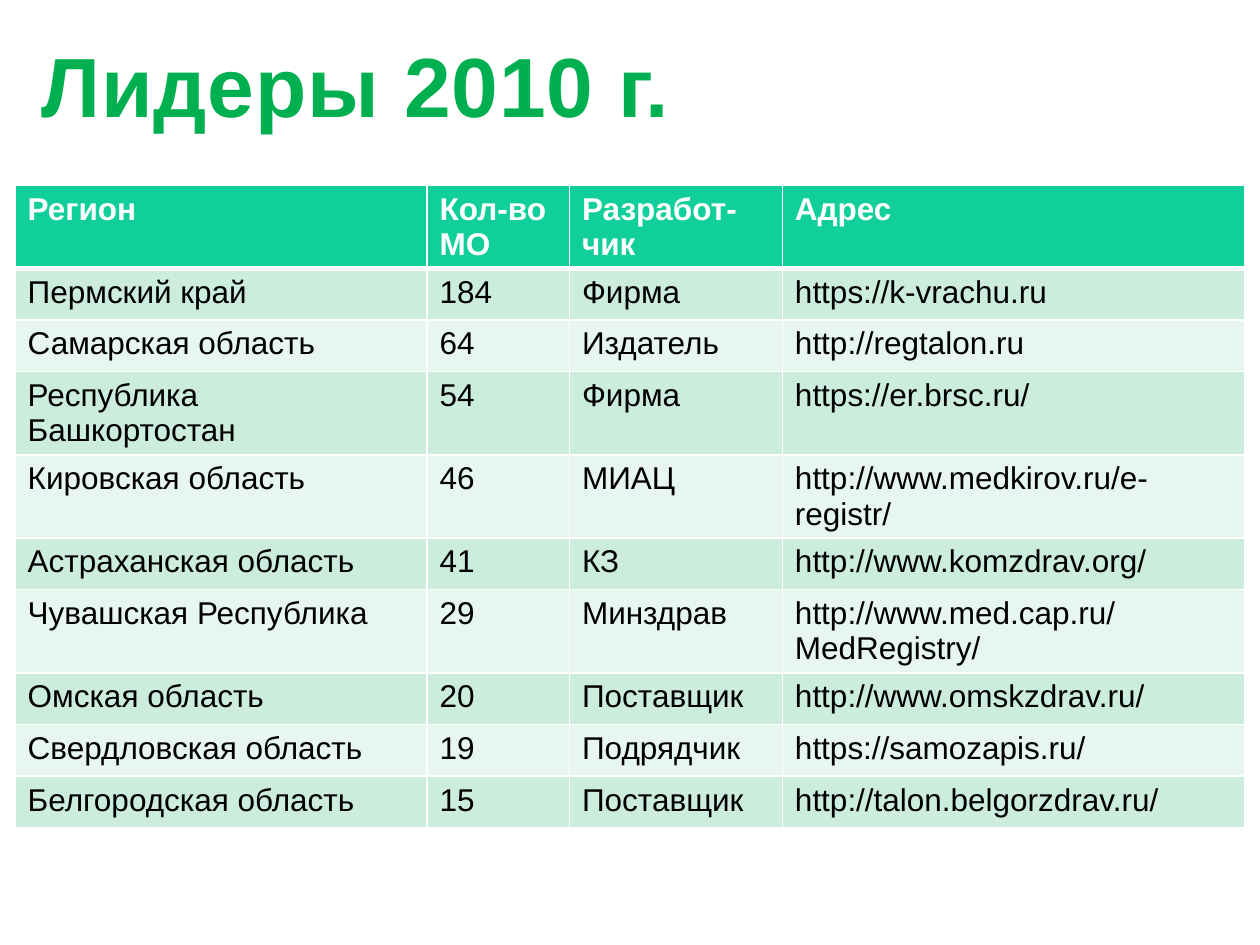
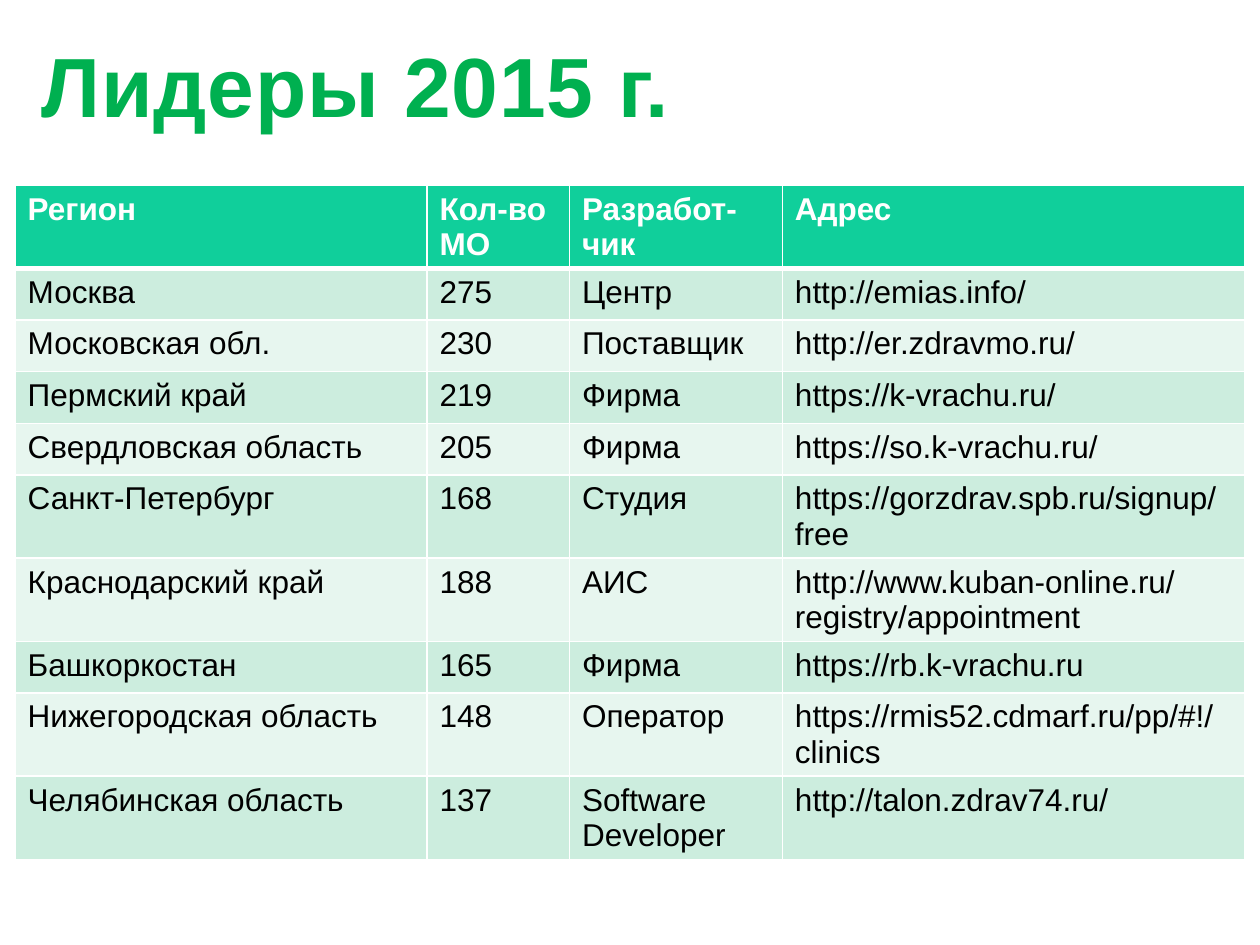
"""Build two slides listing the leading regions of 2010 and 2015."""
from lxml import etree
from pptx import Presentation
from pptx import util as u
from pptx.dml.color import RGBColor
from pptx.enum import text
from pptx.oxml.ns import qn

GREEN = RGBColor(0x00, 0xB0, 0x50)
OUTLINE = RGBColor(0xA6, 0xA6, 0xA6)
WHITE = RGBColor(0xFF, 0xFF, 0xFF)
BLACK = RGBColor(0x00, 0x00, 0x00)
HEADER_FILL = RGBColor(0x10, 0xCF, 0x9B)
BAND_FILLS = (RGBColor(0xE7, 0xF6, 0xEF), RGBColor(0xCC, 0xED, 0xDE))

FONT = "Arial"
TITLE_BOX = [u.Inches(v) for v in (0.23, 0.16, 9.53, 1.02)]
TABLE_BOX = [u.Inches(v) for v in (0.12, 1.47, 9.76, 4.1)]
COLUMN_SHARES = (3.27, 1.13, 1.69, 3.67)
HEADER = ("Регион", "Кол-во МО", "Разработ-чик", "Адрес")

LEADERS = {
    "Лидеры 2010 г.": (
        ("Пермский край", "184", "Фирма", "https://k-vrachu.ru"),
        ("Самарская область", "64", "Издатель", "http://regtalon.ru"),
        ("Республика Башкортостан", "54", "Фирма", "https://er.brsc.ru/"),
        ("Кировская область", "46", "МИАЦ", "http://www.medkirov.ru/e-registr/"),
        ("Астраханская область", "41", "КЗ", "http://www.komzdrav.org/"),
        ("Чувашская Республика", "29", "Минздрав", "http://www.med.cap.ru/MedRegistry/"),
        ("Омская область", "20", "Поставщик", "http://www.omskzdrav.ru/"),
        ("Свердловская область", "19", "Подрядчик", "https://samozapis.ru/"),
        ("Белгородская область", "15", "Поставщик", "http://talon.belgorzdrav.ru/"),
    ),
    "Лидеры 2015 г.": (
        ("Москва", "275", "Центр", "http://emias.info/"),
        ("Московская обл.", "230", "Поставщик", "http://er.zdravmo.ru/"),
        ("Пермский край", "219", "Фирма", "https://k-vrachu.ru/"),
        ("Свердловская область", "205", "Фирма", "https://so.k-vrachu.ru/"),
        ("Санкт-Петербург", "168", "Студия", "https://gorzdrav.spb.ru/signup/free"),
        ("Краснодарский край", "188", "АИС", "http://www.kuban-online.ru/registry/appointment"),
        ("Башкоркостан", "165", "Фирма", "https://rb.k-vrachu.ru"),
        ("Нижегородская область", "148", "Оператор", "https://rmis52.cdmarf.ru/pp/#!/clinics"),
        ("Челябинская область", "137", "Software Developer", "http://talon.zdrav74.ru/"),
    ),
}


def make_line(tag, color, points):
    """Return a solid line element of the given colour and width."""
    ln = etree.Element(qn(tag), w=str(u.Pt(points)))
    fill = etree.SubElement(ln, qn("a:solidFill"))
    etree.SubElement(fill, qn("a:srgbClr"), val=str(color))
    return ln


def set_font(font, size, color, bold):
    """Apply the shared typeface with a size, colour and weight."""
    font.name, font.size, font.bold = FONT, u.Pt(size), bold
    font.color.rgb = color


def add_title(slide, box, title):
    """Fill the title placeholder with outlined, slightly spaced text."""
    sp = slide.shapes.title
    sp.left, sp.top, sp.width, sp.height = box
    tf = sp.text_frame
    tf.text = title
    tf.auto_size = text.MSO_AUTO_SIZE.NONE
    tf.vertical_anchor = text.MSO_ANCHOR.MIDDLE
    p = tf.paragraphs[0]
    p.alignment = text.PP_ALIGN.LEFT
    r = p.runs[0]
    set_font(r.font, 48, GREEN, True)
    props = r._r.get_or_add_rPr()
    props.set("spc", "50")
    props.insert(0, make_line("a:ln", OUTLINE, 0.9))


def format_cell(cell, row, value):
    """Write one cell with its band fill and white borders."""
    is_header = row == 0
    cell.text = value
    set_font(cell.text_frame.paragraphs[0].font, 18, WHITE if is_header else BLACK, is_header)
    cell.fill.solid()
    cell.fill.fore_color.rgb = HEADER_FILL if is_header else BAND_FILLS[row % 2]
    widths = {"L": 1, "R": 1, "T": 3 if row == 1 else 1, "B": 3 if is_header else 1}
    props = cell._tc.get_or_add_tcPr()
    for i, (side, points) in enumerate(widths.items()):
        props.insert(i, make_line(f"a:ln{side}", WHITE, points))


def add_leaders_table(slide, box, leaders):
    """Add the table of regions, sharing the box width among columns."""
    rows = (HEADER, *leaders)
    table = slide.shapes.add_table(len(rows), len(HEADER), *box).table
    for column, share in zip(table.columns, COLUMN_SHARES):
        column.width = int(box[2] * share / sum(COLUMN_SHARES))
    for i, values in enumerate(rows):
        for j, value in enumerate(values):
            format_cell(table.cell(i, j), i, value)


def main():
    """Create the presentation and save it."""
    prs = Presentation()
    prs.slide_width, prs.slide_height = u.Inches(10), u.Inches(7.5)
    for title, leaders in LEADERS.items():
        slide = prs.slides.add_slide(prs.slide_layouts[5])
        add_title(slide, TITLE_BOX, title)
        add_leaders_table(slide, TABLE_BOX, leaders)
    prs.save("out.pptx")


if __name__ == "__main__":
    main()
